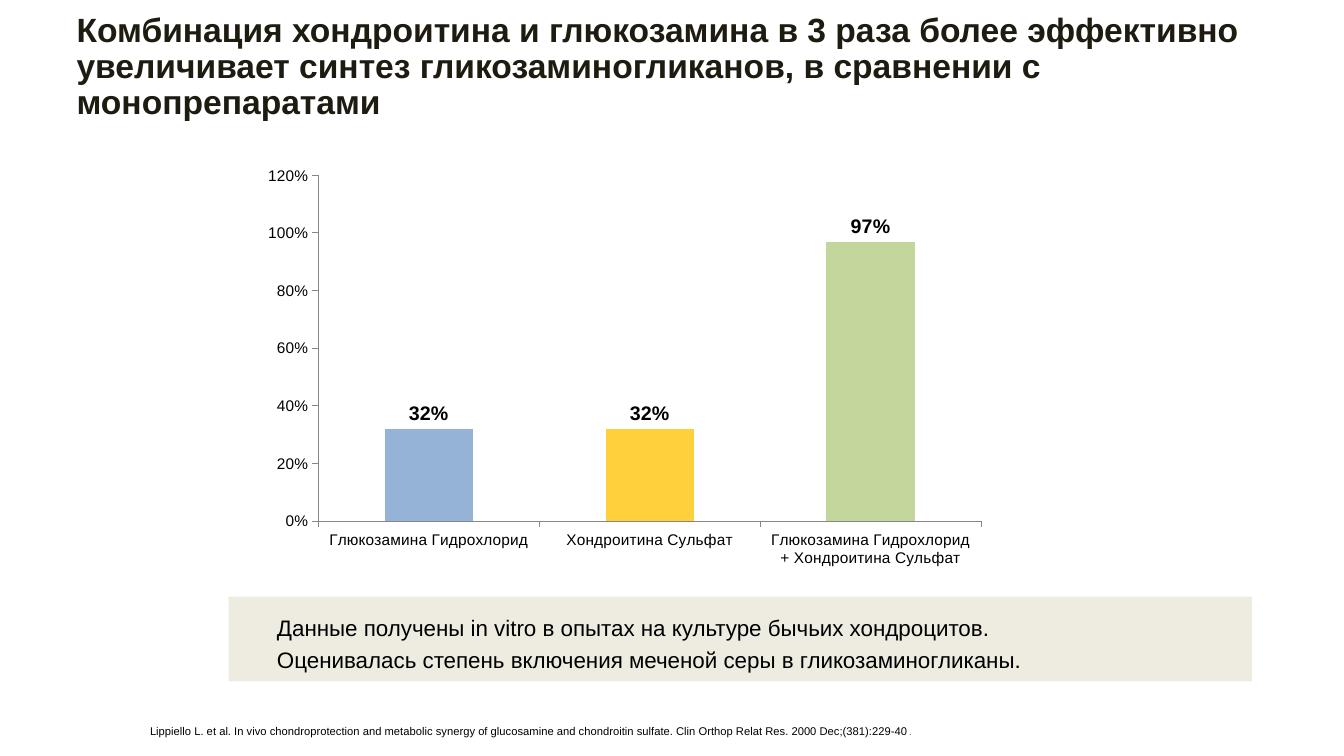
from lxml import etree
from pptx import Presentation
from pptx.chart.data import CategoryChartData
from pptx.dml.color import RGBColor
from pptx.enum.chart import XL_CHART_TYPE, XL_LABEL_POSITION, XL_TICK_MARK
from pptx.enum.shapes import MSO_SHAPE
from pptx.util import Pt

COLUMNS = XL_CHART_TYPE.COLUMN_CLUSTERED
ABOVE_BAR = XL_LABEL_POSITION.OUTSIDE_END
TICK_OUT = XL_TICK_MARK.OUTSIDE
RECTANGLE = MSO_SHAPE.RECTANGLE

FONT = "Arial"
BLACK = RGBColor(0x00, 0x00, 0x00)
TITLE_DARK = RGBColor(0x1E, 0x1C, 0x11)
GREY = RGBColor(0x80, 0x80, 0x80)
AXIS_GREY = RGBColor(0x86, 0x86, 0x86)
BEIGE = RGBColor(0xEE, 0xEC, 0xE1)
BLUE = RGBColor(0x95, 0xB3, 0xD7)
YELLOW = RGBColor(0xFF, 0xD0, 0x3B)
GREEN = RGBColor(0xC3, 0xD6, 0x9B)

# Content: each paragraph is a list of (text, colour) runs
TITLE = [[(
    "Комбинация хондроитина и глюкозамина в 3 раза более эффективно "
    "\nувеличивает синтез гликозаминогликанов, в сравнении с монопрепаратами",
    TITLE_DARK)]]
NOTE = [
    [("Данные получены in vitro в опытах на культуре бычьих хондроцитов.", BLACK)],
    [("Оценивалась степень включения меченой серы в гликозаминогликаны.", BLACK)],
]
CITATION = [[
    ("Lippiello L. et al. In vivo chondroprotection and metabolic synergy of "
     "glucosamine and chondroitin sulfate. Clin Orthop Relat Res. 2000 "
     "Dec;(381):229-40", BLACK),
    (".", GREY),
]]
SYNTHESIS = [
    ("Глюкозамина Гидрохлорид", 0.32, BLUE),
    ("Хондроитина Сульфат", 0.32, YELLOW),
    ("Глюкозамина Гидрохлорид + Хондроитина Сульфат", 0.97, GREEN),
]

# Places in points: left, top, width, height
TITLE_AT = (54.7, 9.4, 838.8, 79.9)
CHART_AT = (159.8, 90.7, 541.4, 319.7)
PANEL_AT = (163.4, 426.2, 730.8, 60.5)
NOTE_AT = (190.8, 431.3, 645.8, 51.8)
CITATION_AT = (100.1, 514.1, 652.3, 17.3)
PLOT_LAYOUT = {"x": 0.125, "y": 0.108, "w": 0.875, "h": 0.773}  # shares of the chart


def points(place):
    return [Pt(value) for value in place]


def style(font, size, color, bold=False):
    font.name = FONT
    font.size = Pt(size)
    font.bold = bold
    font.color.rgb = color


def add_text(slide, paragraphs, place, size, bold=False, spacing=1.0, inset=(7.2, 3.6)):
    frame = slide.shapes.add_textbox(*points(place)).text_frame
    frame.word_wrap = True
    frame.margin_left = frame.margin_right = Pt(inset[0])
    frame.margin_top = frame.margin_bottom = Pt(inset[1])
    for index, runs in enumerate(paragraphs):
        paragraph = frame.add_paragraph() if index else frame.paragraphs[0]
        paragraph.line_spacing = spacing
        for text, color in runs:
            for line_index, line in enumerate(text.split("\n")):
                if line_index:
                    paragraph.add_line_break()
                run = paragraph.add_run()
                run.text = line
                style(run.font, size, color, bold)


def set_plot_layout(chart):
    """Fix the inner plot area."""
    plot_area = chart.plots[0]._element.getparent()
    namespace = etree.QName(plot_area).namespace
    for old in plot_area.findall(f"{{{namespace}}}layout"):
        plot_area.remove(old)
    layout = etree.Element(f"{{{namespace}}}layout")
    manual = etree.SubElement(layout, f"{{{namespace}}}manualLayout")
    settings = [("layoutTarget", "inner"), ("xMode", "edge"), ("yMode", "edge")]
    for tag, value in settings + list(PLOT_LAYOUT.items()):
        etree.SubElement(manual, f"{{{namespace}}}{tag}", val=str(value))
    plot_area.insert(0, layout)


def add_synthesis_chart(slide):
    data = CategoryChartData(number_format="0%")
    data.categories = [name for name, _, _ in SYNTHESIS]
    data.add_series("Series 1", [share for _, share, _ in SYNTHESIS])
    chart = slide.shapes.add_chart(COLUMNS, *points(CHART_AT), data).chart
    chart.has_legend = False
    chart.has_title = False
    style(chart.font, 11, BLACK)
    set_plot_layout(chart)

    # Axes
    for axis in (chart.category_axis, chart.value_axis):
        axis.has_major_gridlines = False
        axis.major_tick_mark = TICK_OUT
        axis.format.line.color.rgb = AXIS_GREY
        axis.format.line.width = Pt(0.75)
    shares = chart.value_axis
    shares.minimum_scale, shares.maximum_scale, shares.major_unit = 0, 1.2, 0.2
    shares.tick_labels.number_format = "0%"
    shares.tick_labels.number_format_is_linked = False

    # Bars and their labels
    plot = chart.plots[0]
    plot.gap_width = 150
    plot.vary_by_categories = False
    bars = plot.series[0]
    for index, (_, _, color) in enumerate(SYNTHESIS):
        fill = bars.points[index].format.fill
        fill.solid()
        fill.fore_color.rgb = color
    labels = bars.data_labels
    labels.show_value = True
    labels.number_format = "0%"
    labels.number_format_is_linked = False
    labels.position = ABOVE_BAR
    style(labels.font, 14, BLACK, bold=True)


def main():
    presentation = Presentation()
    presentation.slide_width, presentation.slide_height = Pt(960), Pt(540)
    slide = presentation.slides.add_slide(presentation.slide_layouts[6])

    # Panel behind the note
    panel = slide.shapes.add_shape(RECTANGLE, *points(PANEL_AT))
    panel.shadow.inherit = False
    panel.fill.solid()
    panel.fill.fore_color.rgb = BEIGE
    panel.line.fill.background()

    # Chart and texts
    add_synthesis_chart(slide)
    add_text(slide, TITLE, TITLE_AT, 24, bold=True, spacing=0.9, inset=(0, 0))
    add_text(slide, CITATION, CITATION_AT, 8)
    add_text(slide, NOTE, NOTE_AT, 16, spacing=1.2)

    presentation.save("out.pptx")


if __name__ == "__main__":
    main()
